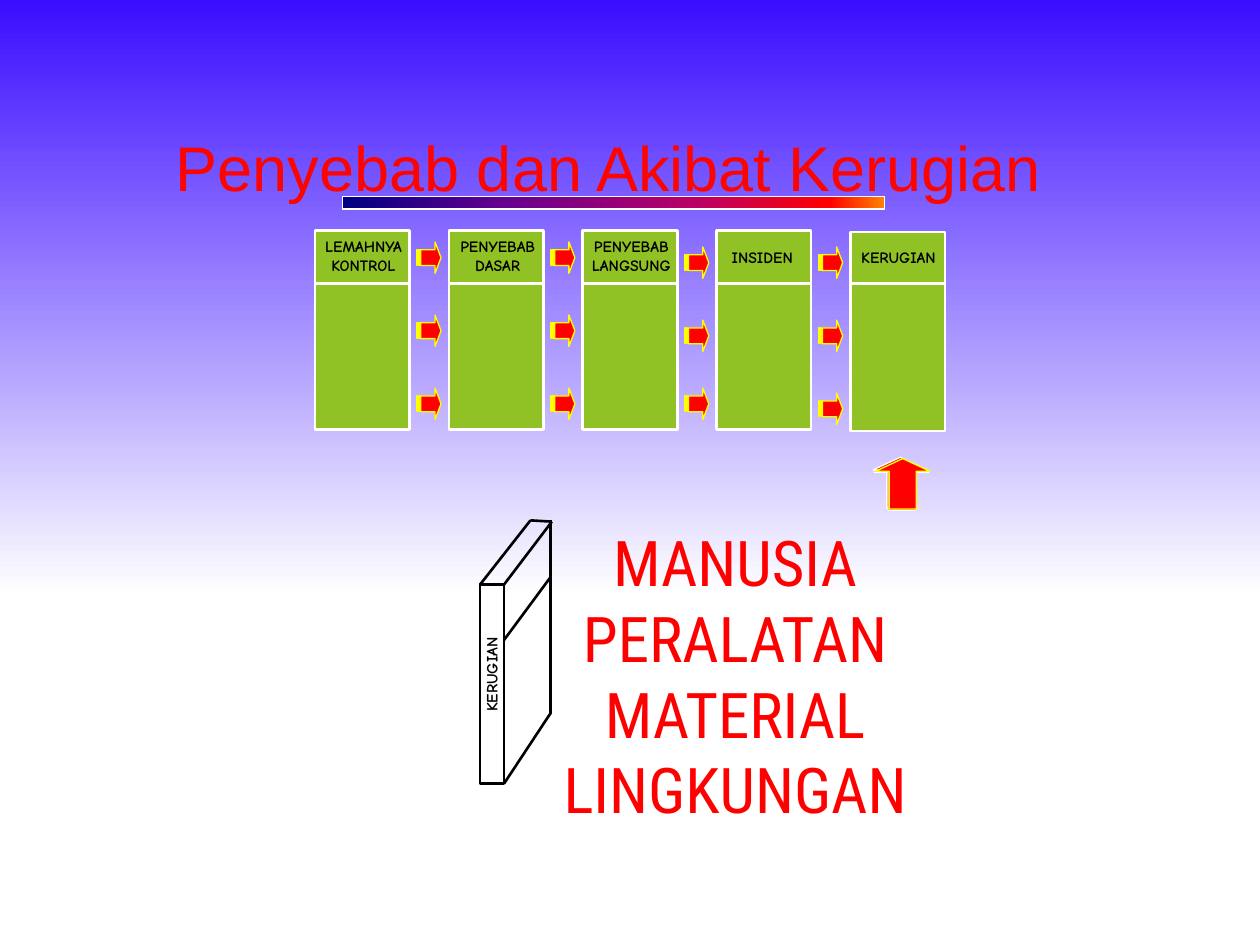
"""Build the loss causation slide: five linked columns and the four kinds of loss."""
from lxml import etree
from pptx import Presentation
from pptx.dml.color import RGBColor
from pptx.enum.shapes import MSO_CONNECTOR, MSO_SHAPE
from pptx.enum.text import MSO_AUTO_SIZE, PP_ALIGN
from pptx.oxml import parse_xml
from pptx.oxml.ns import nsdecls, qn
from pptx.util import Inches, Pt

RECT = MSO_SHAPE.RECTANGLE
STRIPED_ARROW = MSO_SHAPE.STRIPED_RIGHT_ARROW
UP_ARROW = MSO_SHAPE.UP_ARROW
LINE = MSO_CONNECTOR.STRAIGHT
CENTER = PP_ALIGN.CENTER
GROW = MSO_AUTO_SIZE.SHAPE_TO_FIT_TEXT
FIXED = MSO_AUTO_SIZE.NONE

COLORS = {"green": "90C226", "red": "FF0000", "yellow": "FFFF00",
          "white": "FFFFFF", "black": "000000"}
SKY = [(0, "3B0DFF"), (63, "FFFFFF")]
FIRE = [(0, "4D0808"), (15, "FF0300"), (27, "FF7A00"), (50, "FFF200"),
        (73, "FF7A00"), (85, "FF0300"), (100, "4D0808")]
SUNSET = [(0, "000082"), (30, "66008F"), (65, "BA0066"), (90, "FF0000"), (100, "FF8200")]

prs = Presentation()
prs.slide_width, prs.slide_height = Inches(10), Inches(7.5)
s = prs.slides.add_slide(prs.slide_layouts[6])


def gradient(stops, angle):
    gs = "".join(f'<a:gs pos="{pos * 1000}"><a:srgbClr val="{color}"/></a:gs>'
                 for pos, color in stops)
    return parse_xml(f'<a:gradFill {nsdecls("a")} rotWithShape="1"><a:gsLst>{gs}</a:gsLst>'
                     f'<a:lin ang="{angle * 60000}" scaled="0"/></a:gradFill>')


def add(kind, box, fill=None, line=None, width=0.75, lines=(), size=9,
        font="Comic Neue", color="black", auto=GROW):
    if kind == "text":
        sp = s.shapes.add_textbox(*map(Inches, box))
        tf = sp.text_frame
        tf.word_wrap = False
        tf.auto_size = auto
        for i, text in enumerate(lines):
            p = tf.paragraphs[0] if i == 0 else tf.add_paragraph()
            p.text = text
            p.alignment = CENTER
            p.font.size, p.font.name, p.font.bold = Pt(size), font, size == 9
            p.font.color.rgb = RGBColor.from_string(COLORS[color])
        return sp
    if kind == "line":
        sp = s.shapes.add_connector(LINE, *map(Inches, box))
        etree.SubElement(sp.line._get_or_add_ln().getparent(), qn("a:effectLst"))
    else:
        sp = s.shapes.add_shape(kind, *map(Inches, box))
        sp.shadow.inherit = False
        if isinstance(fill, tuple):
            sp.fill.background()
            no_fill = sp._element.spPr.find(qn("a:noFill"))
            no_fill.getparent().replace(no_fill, gradient(*fill))
        elif fill:
            sp.fill.solid()
            sp.fill.fore_color.rgb = RGBColor.from_string(COLORS[fill])
        else:
            sp.fill.background()
    if line:
        sp.line.color.rgb = RGBColor.from_string(COLORS[line])
        sp.line.width = Pt(width)
    else:
        sp.line.fill.background()
    return sp


add(RECT, (0, 0, 10, 7.5), (SKY, 90))

columns = [
    (["LEMAHNYA", "KONTROL"], 2.42, 0.93, 1.83),
    (["PENYEBAB", "DASAR"], 3.52, 0.86, 1.83),
    (["PENYEBAB", "LANGSUNG"], 4.55, 0.92, 1.83),
    (["INSIDEN"], 5.65, 0.8, 1.83),
    (["KERUGIAN"], 6.69, 0.88, 1.84),
]
pitch = 4.25 / 4
for i, (label, x, w, top) in enumerate(columns):
    left = 2.5 + i * pitch
    add(RECT, (left, top, 0.75, 1.58), "green", "white", 1.5)
    add("line", (left, 2.25, left + 0.75, 2.25), line="white", width=1.5)
    two = len(label) == 2
    add("text", (x, 1.83 if two else 1.92, w, 0.4 if two else 0.25), lines=label)

arrow_tops = [(1.92, 2.5, 3.08), (1.92, 2.5, 3.08), (1.96, 2.54, 3.08), (1.96, 2.54, 3.12)]
for i, tops in enumerate(arrow_tops):
    for top in tops:
        sp = add(STRIPED_ARROW, (3.31 + i * pitch, top, 0.19, 0.25), "red", "yellow")
        sp.adjustments[0], sp.adjustments[1] = 0.5, 0.25

add(RECT, (3.81, 4.64, 0.19, 1.58), line="black", width=1.5)
panel_edges = [
    (4, 4.64, 4.38, 4.14), (3.81, 4.64, 4.21, 4.13), (4.21, 4.13, 4.38, 4.14),
    (4.37, 4.13, 4.37, 5.67), (4, 6.22, 4.37, 5.66), (4, 5.08, 4.37, 4.58),
]
for edge in panel_edges:
    add("line", edge, line="black", width=1.5)
add("text", (3.46, 5.23, 0.88, 0.25), lines=["KERUGIAN"]).rotation = 270

add("text", (4.68, 4.11, 2.31, 2.36), size=36, font="Roboto Condensed", color="red",
    lines=["MANUSIA", "PERALATAN", "MATERIAL", "LINGKUNGAN"], auto=FIXED)

for x, y, line in [(6.93, 3.63, "white"), (6.94, 3.65, "white"), (6.95, 3.64, "yellow")]:
    sp = add(UP_ARROW, (x, y, 0.43, 0.4), "red", line)
    sp.adjustments[0], sp.adjustments[1] = 0.5, 0.25

sp = add("text", (2.71, 0.92, 4.24, 0.46), size=36, font="Arial", color="red",
         lines=["Penyebab dan Akibat Kerugian"], auto=FIXED)
sp.text_frame.margin_top = Inches(0.1)
r = sp.text_frame.paragraphs[0].runs[0]
r.font._element.insert(0, gradient(FIRE, 90))

add(RECT, (2.72, 1.56, 4.3, 0.1), (SUNSET, 0), "white")

prs.save("out.pptx")
